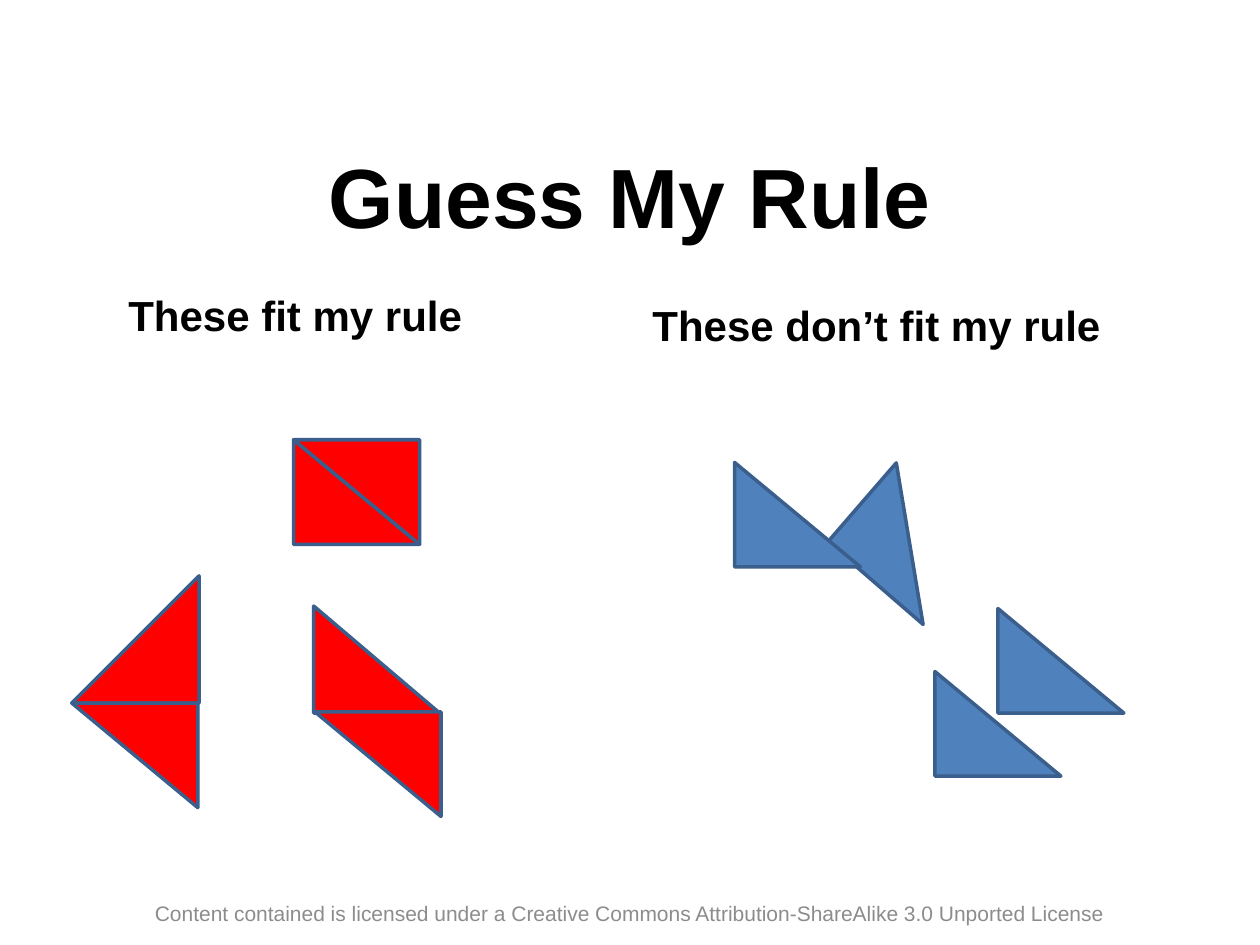
from dataclasses import dataclass

from pptx import Presentation
from pptx.dml.color import RGBColor
from pptx.enum.shapes import MSO_SHAPE as Shape
from pptx.enum.text import MSO_ANCHOR as Anchor, MSO_AUTO_SIZE as AutoSize, PP_ALIGN as Align
from pptx.util import Inches, Pt

TITLE_ONLY = 5


@dataclass(frozen=True)
class Theme:
    font: str = "Arial"
    ink: str = "000000"
    muted: str = "8C8C8C"
    fits: str = "FF0000"
    misfits: str = "4F81BD"
    outline: str = "3A5F8C"
    outline_width: float = 2
    title_size: int = 48
    heading_size: int = 24
    footer_size: int = 12


class SlideBuilder:
    def __init__(self, slide, theme):
        self.slide = slide
        self.theme = theme

    def add_text(self, box, text, size, color, bold=False, align=Align.LEFT, anchor=Anchor.TOP):
        frame = box.text_frame
        frame.word_wrap = True
        frame.vertical_anchor = anchor
        para = frame.paragraphs[0]
        para.alignment = align
        span = para.add_run()
        span.text = text
        span.font.name = self.theme.font
        span.font.size = Pt(size)
        span.font.bold = bold
        span.font.color.rgb = RGBColor.from_string(color)

    def title(self, text, left, top, width, height):
        box = self.slide.shapes.title
        box.left, box.top = Inches(left), Inches(top)
        box.width, box.height = Inches(width), Inches(height)
        self.add_text(box, text, self.theme.title_size, self.theme.ink, True,
                      Align.CENTER, Anchor.MIDDLE)

    def text_box(self, left, top, width, height):
        return self.slide.shapes.add_textbox(
            Inches(left), Inches(top), Inches(width), Inches(height))

    def heading(self, text, left, top, width):
        box = self.text_box(left, top, width, 0.5)
        self.add_text(box, text, self.theme.heading_size, self.theme.ink, True)
        box.text_frame.auto_size = AutoSize.SHAPE_TO_FIT_TEXT

    def footer(self, text, left, top, width, height):
        box = self.text_box(left, top, width, height)
        self.add_text(box, text, self.theme.footer_size, self.theme.muted,
                      align=Align.CENTER, anchor=Anchor.MIDDLE)

    def triangle(self, color, left, top, rotation=0, width=1, height=0.83):
        triangle = self.slide.shapes.add_shape(
            Shape.RIGHT_TRIANGLE, Inches(left), Inches(top), Inches(width), Inches(height))
        triangle.rotation = rotation
        triangle.shadow.inherit = False
        triangle.fill.solid()
        triangle.fill.fore_color.rgb = RGBColor.from_string(color)
        triangle.line.color.rgb = RGBColor.from_string(self.theme.outline)
        triangle.line.width = Pt(self.theme.outline_width)


def main():
    deck = Presentation()
    deck.slide_width, deck.slide_height = Inches(10), Inches(7.5)
    theme = Theme()
    page = SlideBuilder(deck.slides.add_slide(deck.slide_layouts[TITLE_ONLY]), theme)

    page.title("Guess My Rule", 0.5, 0.92, 9, 1.25)
    page.footer("Content contained is licensed under a Creative Commons "
                "Attribution-ShareAlike 3.0 Unported License", 1, 7, 8, 0.5)

    # Left, top, rotation and, where it differs, width and height
    fitting = [
        (2.33, 3.49),
        (2.33, 3.49, 180),
        (2.49, 4.81, 0, 1, 0.85),
        (0.57, 4.57, 270, 1.01, 1.01),
        (0.57, 5.58, 180),
        (2.5, 5.65, 180),
    ]
    misfitting = [(6.72, 3.9, 40.9), (7.42, 5.33), (5.83, 3.67), (7.92, 4.83)]
    for color, places in ((theme.fits, fitting), (theme.misfits, misfitting)):
        for place in places:
            page.triangle(color, *place)

    page.heading("These fit my rule", 0.92, 2.25, 2.92)
    page.heading("These don’t fit my rule", 5.08, 2.33, 4.42)
    deck.save("out.pptx")


if __name__ == "__main__":
    main()
